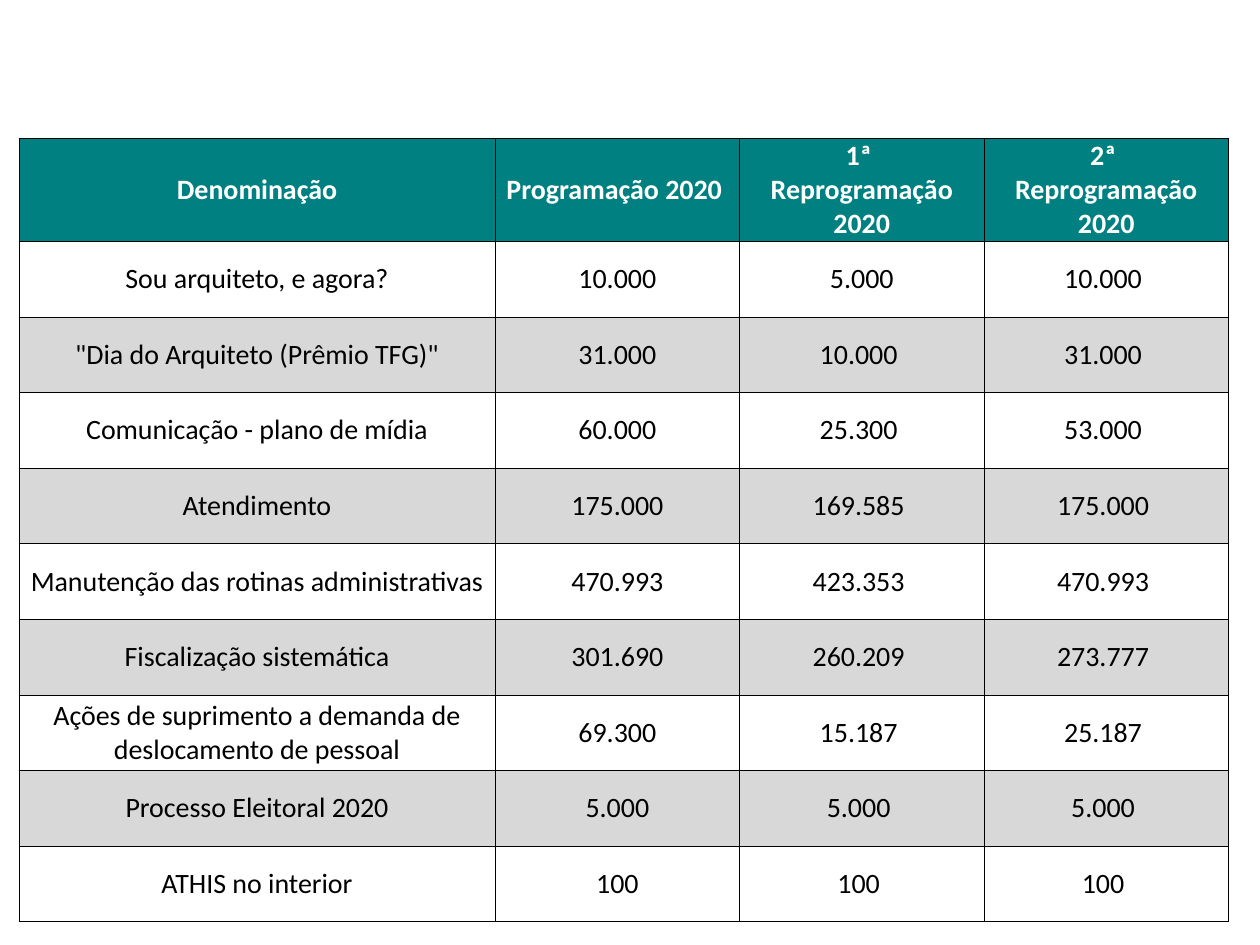
from lxml import etree
from pptx import Presentation
from pptx.dml.color import RGBColor
from pptx.enum.text import MSO_ANCHOR, PP_ALIGN
from pptx.oxml.ns import qn
from pptx.util import Inches, Pt

CENTER = PP_ALIGN.CENTER
MIDDLE = MSO_ANCHOR.MIDDLE
COLORS = {
    "header": "008080",
    "header_text": "FFFFFF",
    "plain": "FFFFFF",
    "band": "D8D8D8",
    "text": "000000",
    "border": "000000",
}
FONT = "Calibri"
COLUMN_WIDTHS = [3.78, 1.94, 1.94, 1.94]
ROW_HEIGHT = 0.6
ROWS = [
    ("Denominação", "Programação 2020 ", "1ª \nReprogramação 2020", "2ª \nReprogramação 2020"),
    ("Sou arquiteto, e agora?", "10.000", "5.000", "10.000 "),
    ('"Dia do Arquiteto (Prêmio TFG)"', "31.000", "10.000 ", "31.000 "),
    ("Comunicação - plano de mídia", "60.000", "25.300 ", "53.000 "),
    ("Atendimento", "175.000", "169.585 ", "175.000 "),
    ("Manutenção das rotinas administrativas", "470.993", "423.353 ", "470.993 "),
    ("Fiscalização sistemática", "301.690", "260.209 ", "273.777 "),
    ("Ações de suprimento a demanda de deslocamento de pessoal", "69.300", "15.187 ", "25.187 "),
    ("Processo Eleitoral 2020", "5.000", "5.000 ", "5.000 "),
    ("ATHIS no interior", "100", "100 ", "100 "),
]


def rgb(name):
    return RGBColor.from_string(COLORS[name])


def add_borders(cell):
    """Draw all four cell borders; they must precede the cell fill."""
    tc_pr = cell._tc.get_or_add_tcPr()
    for side in ("a:lnL", "a:lnR", "a:lnT", "a:lnB"):
        ln = etree.SubElement(tc_pr, qn(side), w=str(Pt(0.5)))
        fill = etree.SubElement(ln, qn("a:solidFill"))
        etree.SubElement(fill, qn("a:srgbClr"), val=COLORS["border"])


def format_cell(cell, text, fill, color, bold):
    add_borders(cell)
    cell.fill.solid()
    cell.fill.fore_color.rgb = rgb(fill)
    cell.margin_left = cell.margin_right = 0
    cell.margin_top = cell.margin_bottom = 0
    cell.vertical_anchor = MIDDLE
    cell.text_frame.text = text
    for p in cell.text_frame.paragraphs:
        p.alignment = CENTER
        for r in p.runs:
            r.font.name = FONT
            r.font.size = Pt(16)
            r.font.bold = bold
            r.font.color.rgb = rgb(color)


def add_budget_table(slide):
    frame = slide.shapes.add_table(
        len(ROWS), len(COLUMN_WIDTHS), Inches(0.15), Inches(1.1),
        Inches(sum(COLUMN_WIDTHS)), Inches(ROW_HEIGHT * len(ROWS)))
    table = frame.table
    for column, width in zip(table.columns, COLUMN_WIDTHS):
        column.width = Inches(width)
    for i, values in enumerate(ROWS):
        table.rows[i].height = Inches(ROW_HEIGHT)
        header = i == 0
        fill = "header" if header else "plain" if i % 2 else "band"
        color = "header_text" if header else "text"
        for j, text in enumerate(values):
            format_cell(table.cell(i, j), text, fill, color, header)


def main():
    prs = Presentation()
    prs.slide_width = Inches(10)
    prs.slide_height = Inches(7.5)
    slide = prs.slides.add_slide(prs.slide_layouts[6])
    add_budget_table(slide)
    prs.save("out.pptx")


if __name__ == "__main__":
    main()
